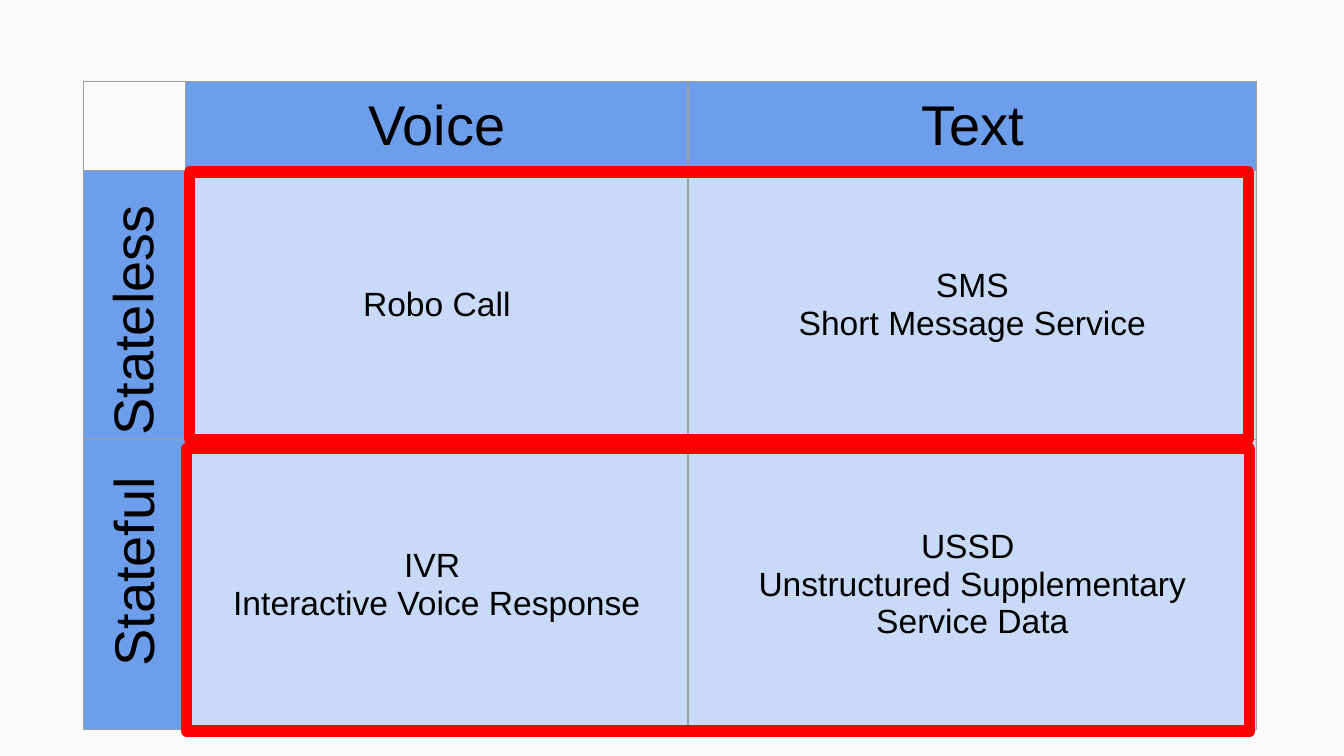
"""Build a slide with a two-by-two matrix of mobile messaging channels."""
from dataclasses import dataclass

from lxml import etree
from pptx import Presentation
from pptx.dml.color import RGBColor
from pptx.enum.shapes import MSO_SHAPE
from pptx.enum.text import MSO_ANCHOR, PP_ALIGN
from pptx.oxml import parse_xml
from pptx.oxml.ns import nsdecls, qn
from pptx.util import Inches, Pt

RECT = MSO_SHAPE.RECTANGLE
TOP, MIDDLE = MSO_ANCHOR.TOP, MSO_ANCHOR.MIDDLE
CENTER, LEFT = PP_ALIGN.CENTER, PP_ALIGN.LEFT

COLORS = {"back": "FAFAFA", "header": "6D9EEB", "body": "C9DAF8",
          "border": "9E9E9E", "frame": "FF0000", "text": "000000"}
FONT = "Arial"
HEAD_SIZE, BODY_SIZE = 30, 18
UNIT = Inches(0.1)
SLIDE_COLS, SLIDE_ROWS = 100, 56.25
TABLE_LEFT, TABLE_TOP = 6.2, 6.05
COL_WIDTHS = (7.6, 37.4, 42.3)
ROW_HEIGHTS = (6.6, 20, 21.6)
CELLS = (
    ("", "Voice", "Text"),
    ("", "Robo Call", "SMS\nShort Message Service"),
    ("", "IVR \nInteractive Voice Response",
     "USSD \nUnstructured Supplementary Service Data"),
)


@dataclass(frozen=True)
class Box:
    left: float
    top: float
    width: float
    height: float
    text: str = ""

    def place(self) -> tuple[int, ...]:
        return tuple(grid(n) for n in (self.left, self.top, self.width, self.height))


ROW_LABELS = (Box(-0.2, 19.1, 19.9, 8.7, "Stateless"),
              Box(-0.7, 36.6, 21, 7, "Stateful"))
FRAMES = (Box(14.1, 12.8, 78.8, 19.9), Box(13.9, 33.4, 79.1, 21))


def grid(n: float) -> int:
    return round(n * UNIT)


def color(name: str) -> RGBColor:
    return RGBColor.from_string(COLORS[name])


def write(tf, text: str, size: int, align: PP_ALIGN) -> None:
    tf.text = text
    for p in tf.paragraphs:
        p.alignment = align
        p.font.name, p.font.size = FONT, Pt(size)
        p.font.color.rgb = color("text")


def set_borders(cell) -> None:
    tc_pr = cell._tc.get_or_add_tcPr()
    for i, side in enumerate("LRTB"):
        tc_pr.insert(i, parse_xml(
            f'<a:ln{side} {nsdecls("a")} w="{Pt(0.75)}"><a:solidFill>'
            f'<a:srgbClr val="{COLORS["border"]}"/></a:solidFill></a:ln{side}>'))


def format_cell(cell, row: int, col: int) -> None:
    header = row == 0 or col == 0
    write(cell.text_frame, CELLS[row][col], HEAD_SIZE if row == 0 else BODY_SIZE, CENTER)
    cell.vertical_anchor = TOP if header else MIDDLE
    cell.margin_left = cell.margin_right = cell.margin_top = cell.margin_bottom = UNIT
    if row == col == 0:
        cell.fill.background()
    else:
        cell.fill.solid()
        cell.fill.fore_color.rgb = color("header" if header else "body")
    set_borders(cell)


def add_matrix(s) -> None:
    box = Box(TABLE_LEFT, TABLE_TOP, sum(COL_WIDTHS), sum(ROW_HEIGHTS))
    table = s.shapes.add_table(len(ROW_HEIGHTS), len(COL_WIDTHS), *box.place()).table
    table.first_row = table.horz_banding = False
    for col, width in enumerate(COL_WIDTHS):
        table.columns[col].width = grid(width)
    for row, height in enumerate(ROW_HEIGHTS):
        table.rows[row].height = grid(height)
        for col in range(len(COL_WIDTHS)):
            format_cell(table.cell(row, col), row, col)


def add_row_label(s, box: Box) -> None:
    sp = s.shapes.add_textbox(*box.place())
    sp.rotation = 270
    tf = sp.text_frame
    tf.word_wrap, tf.vertical_anchor = True, MIDDLE
    tf.margin_left = tf.margin_right = tf.margin_top = tf.margin_bottom = UNIT
    write(tf, box.text, HEAD_SIZE, LEFT)


def add_frame(s, box: Box) -> None:
    sp = s.shapes.add_shape(RECT, *box.place())
    sp.shadow.inherit = False
    sp.fill.background()
    sp.line.color.rgb, sp.line.width = color("frame"), Pt(6)
    etree.SubElement(sp.line._get_or_add_ln(), qn("a:round"))


def main() -> None:
    prs = Presentation()
    prs.slide_width, prs.slide_height = grid(SLIDE_COLS), grid(SLIDE_ROWS)
    s = prs.slides.add_slide(prs.slide_layouts[6])
    s.background.fill.solid()
    s.background.fill.fore_color.rgb = color("back")
    add_matrix(s)
    for box in ROW_LABELS:
        add_row_label(s, box)
    for box in FRAMES:
        add_frame(s, box)
    prs.save("out.pptx")


if __name__ == "__main__":
    main()
